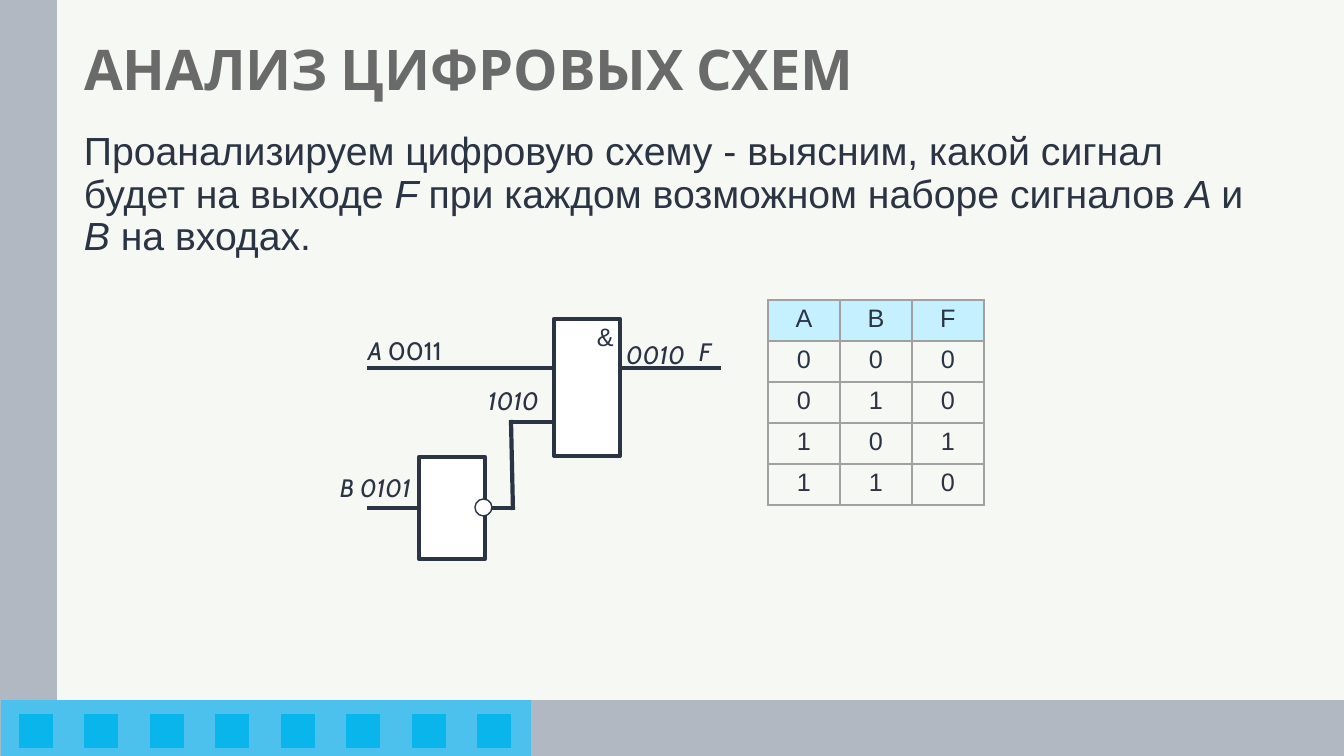
"""Build a slide that analyses a digital circuit with its truth table."""
from dataclasses import dataclass

from lxml import etree
from pptx import Presentation
from pptx.dml.color import RGBColor
from pptx.enum.shapes import MSO_CONNECTOR, MSO_SHAPE
from pptx.enum.text import MSO_ANCHOR, MSO_AUTO_SIZE, PP_ALIGN
from pptx.oxml.ns import qn
from pptx.util import Emu, Pt

RECTANGLE, OVAL = MSO_SHAPE.RECTANGLE, MSO_SHAPE.OVAL
STRAIGHT = MSO_CONNECTOR.STRAIGHT
CENTER, JUSTIFY = PP_ALIGN.CENTER, PP_ALIGN.JUSTIFY
MIDDLE = MSO_ANCHOR.MIDDLE
NO_AUTOFIT, GROW = MSO_AUTO_SIZE.NONE, MSO_AUTO_SIZE.SHAPE_TO_FIT_TEXT


@dataclass(frozen=True)
class Theme:
    """Colours, fonts and type sizes of the slide."""
    paper: str = "F6F8F3"
    frame: str = "B2B8C2"
    strip: str = "4DC1ED"
    square: str = "0AB5EC"
    heading: str = "6A6A6A"
    ink: str = "2A3442"
    white: str = "FFFFFF"
    header: str = "C5F0FF"
    grid: str = "A1A1A1"
    sans: str = "Arial"
    display: str = "Cabin"
    title_size: int = 40
    body_size: int = 28
    label_size: int = 18


THEME = Theme()
PX = 914400 / 100.8
WIDTH, HEIGHT = 1344, 756

TITLE = "АНАЛИЗ ЦИФРОВЫХ СХЕМ"
TITLE_BOX = (74, -1, 1198, 146)
BODY = [
    ("Проанализируем цифровую схему - выясним, какой сигнал будет на выходе ", False),
    ("F ", True),
    ("при каждом возможном наборе сигналов ", False),
    ("A ", True),
    ("и ", False),
    ("B ", True),
    ("на входах.", False),
]
BODY_BOX = (74, 127, 1198, 501)

BANDS = [
    ((0, 0, 57, 756), THEME.frame),
    ((0, 700, 1344, 56), THEME.frame),
    ((1, 700, 530, 56), THEME.strip),
]
SQUARE_COUNT, SQUARE_SIZE, SQUARE_TOP = 8, 34, 714
SQUARE_FIRST, SQUARE_LAST = 19, 477

TRUTH_TABLE = ["АBF", "000", "010", "101", "110"]
TABLE_LEFT, TABLE_TOP, COLUMN, ROW = 768, 300, 72, 41

WIRES_BEHIND = [
    (554, 422, 510, 422),
    (513, 508, 367, 508),
    (721, 368, 367, 368),
]
GATES = [
    (RECTANGLE, (419, 457, 66, 102), 3),
    (RECTANGLE, (554, 319, 66, 137), 3),
    (OVAL, (475, 499, 17, 17), 1),
]
WIRES_FRONT = [(513, 510, 511, 420)]
LABELS = [
    ((358, 330, 116, 40), [("A ", True), ("0011", False)], THEME.display),
    ((330, 467, 109, 40), [("B 0101", True)], THEME.display),
    ((689, 331, 30, 40), [("F", True)], THEME.display),
    ((587, 316, 30, 40), [("&", False)], THEME.sans),
    ((478, 380, 92, 40), [("1010", True)], THEME.display),
    ((616, 334, 92, 40), [("0010", True)], THEME.display),
]


def scaled(lengths):
    """Turn px lengths into EMU."""
    return [Emu(round(length * PX)) for length in lengths]


def color(value):
    """Return an RGB colour."""
    return RGBColor.from_string(value)


def style(para, face, size, ink):
    """Set the font of a whole paragraph."""
    para.font.name = face
    para.font.size = Pt(size)
    para.font.color.rgb = color(ink)


def add_block(page, kind, place, fill, line_width=0):
    """Add a filled shape, outlined when a line width is given."""
    block = page.shapes.add_shape(kind, *scaled(place))
    block.shadow.inherit = False
    block.fill.solid()
    block.fill.fore_color.rgb = color(fill)
    if line_width:
        block.line.color.rgb = color(THEME.ink)
        block.line.width = Pt(line_width)
    else:
        block.line.fill.background()


def add_wire(page, ends):
    """Add one circuit wire."""
    wire = page.shapes.add_connector(STRAIGHT, *scaled(ends))
    wire.line.color.rgb = color(THEME.ink)
    wire.line.width = Pt(3)
    etree.SubElement(wire.element.spPr, qn("a:effectLst"))


def add_text(page, place, spans, face, size, fit):
    """Add a text box of upright and italic spans and return its paragraph."""
    box = page.shapes.add_textbox(*scaled(place))
    box.text_frame.word_wrap = True
    box.text_frame.auto_size = fit
    para = box.text_frame.paragraphs[0]
    style(para, face, size, THEME.ink)
    for text, italic in spans:
        span = para.add_run()
        span.text = text
        span.font.italic = italic
    return para


def add_title(page):
    """Place and format the title placeholder."""
    title = page.shapes.title
    title.left, title.top, title.width, title.height = scaled(TITLE_BOX)
    title.text_frame.text = TITLE
    title.text_frame.auto_size = NO_AUTOFIT
    title.text_frame.vertical_anchor = MIDDLE
    para = title.text_frame.paragraphs[0]
    para.alignment = JUSTIFY
    para.line_spacing = 0.9
    style(para, THEME.display, THEME.title_size, THEME.heading)
    para.font.bold = True


def add_borders(cell):
    """Draw a thin line on all four sides of a cell."""
    properties = cell._tc.get_or_add_tcPr()
    for side in ("a:lnL", "a:lnR", "a:lnT", "a:lnB"):
        border = etree.SubElement(properties, qn(side), w=str(Pt(1)))
        fill = etree.SubElement(border, qn("a:solidFill"))
        etree.SubElement(fill, qn("a:srgbClr"), val=THEME.grid)


def add_truth_table(page):
    """Add the truth table of the circuit."""
    rows, columns = len(TRUTH_TABLE), len(TRUTH_TABLE[0])
    place = (TABLE_LEFT, TABLE_TOP, columns * COLUMN, rows * ROW)
    table = page.shapes.add_table(rows, columns, *scaled(place)).table
    table.first_row = table.horz_banding = False
    for row, values in enumerate(TRUTH_TABLE):
        for column, value in enumerate(values):
            cell = table.cell(row, column)
            cell.text = value
            para = cell.text_frame.paragraphs[0]
            para.alignment = CENTER
            style(para, THEME.sans, THEME.label_size, THEME.ink)
            add_borders(cell)
            if row == 0:
                cell.fill.solid()
                cell.fill.fore_color.rgb = color(THEME.header)
            else:
                cell.fill.background()


def main():
    """Build and save the deck."""
    deck = Presentation()
    deck.slide_width, deck.slide_height = scaled((WIDTH, HEIGHT))
    page = deck.slides.add_slide(deck.slide_layouts[5])
    page.background.fill.solid()
    page.background.fill.fore_color.rgb = color(THEME.paper)
    for place, fill in BANDS:
        add_block(page, RECTANGLE, place, fill)
    pitch = (SQUARE_LAST - SQUARE_FIRST) / (SQUARE_COUNT - 1)
    for index in range(SQUARE_COUNT):
        left = round(SQUARE_FIRST + index * pitch)
        add_block(page, RECTANGLE, (left, SQUARE_TOP, SQUARE_SIZE, SQUARE_SIZE), THEME.square)
    add_title(page)
    body = add_text(page, BODY_BOX, BODY, THEME.sans, THEME.body_size, NO_AUTOFIT)
    body.line_spacing = 0.9
    body.space_before = Pt(10)
    add_truth_table(page)
    for ends in WIRES_BEHIND:
        add_wire(page, ends)
    for kind, place, line_width in GATES:
        add_block(page, kind, place, THEME.white, line_width)
    for ends in WIRES_FRONT:
        add_wire(page, ends)
    for place, spans, face in LABELS:
        add_text(page, place, spans, face, THEME.label_size, GROW)
    deck.save("out.pptx")


if __name__ == "__main__":
    main()
